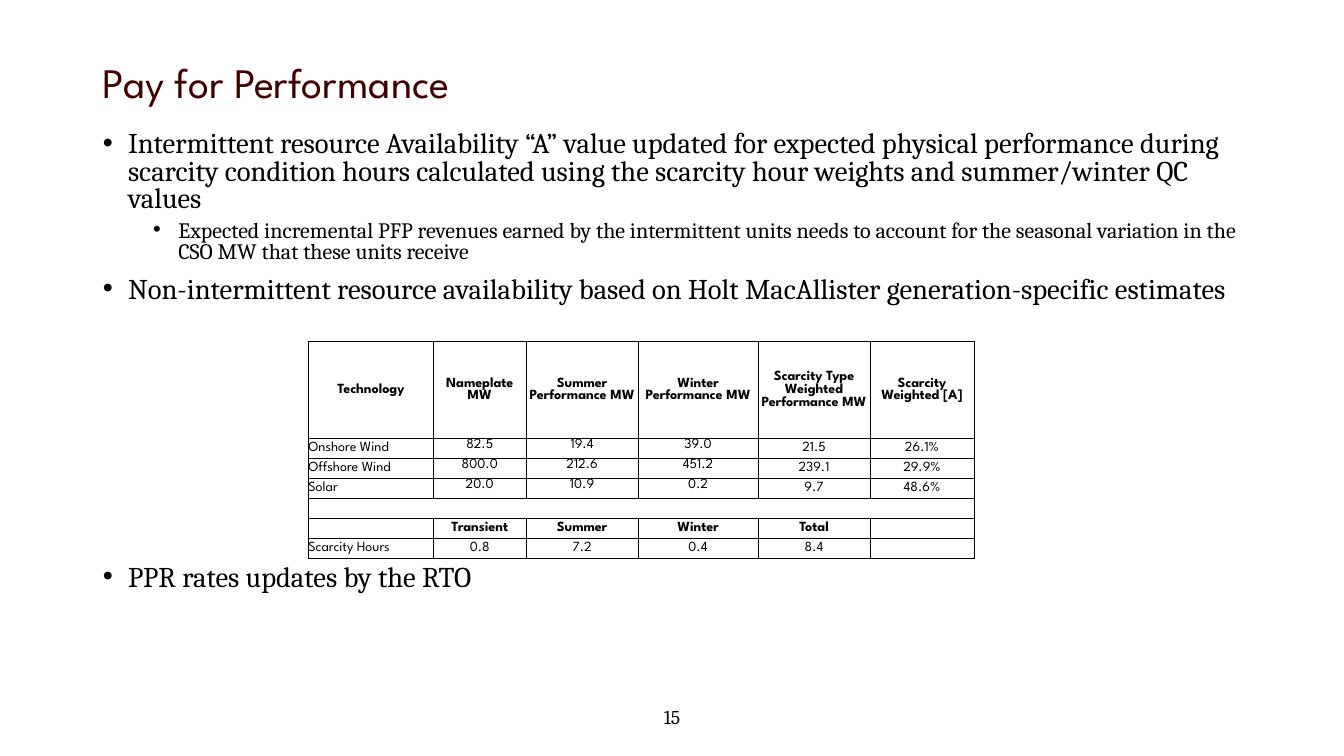
from dataclasses import dataclass
from lxml.etree import SubElement
from pptx import Presentation
from pptx.dml.color import RGBColor
from pptx.enum.text import MSO_ANCHOR, MSO_AUTO_SIZE, PP_ALIGN
from pptx.oxml.ns import qn
from pptx.util import Inches, Pt


@dataclass(frozen=True)
class Theme:
    ink: str = "000000"
    head: str = "400000"
    serif: str = "Cambria"
    sans: str = "League Spartan"
    title: float = 30
    main: float = 20.4
    sub: float = 15.7
    cell: float = 10
    page: float = 14
    rule: float = 0.5


class Deck:
    def __init__(self, theme):
        self.theme = theme
        self.show = Presentation()
        self.show.slide_width = Inches(13.33)
        self.show.slide_height = Inches(7.5)
        self.slide = self.show.slides.add_slide(self.show.slide_layouts[1])

    def wide(self, share):
        return round(self.show.slide_width * share / 100)

    def high(self, share):
        return round(self.show.slide_height * share / 100)

    def box(self, left, top, width, height):
        return self.wide(left), self.high(top), self.wide(width), self.high(height)

    def place(self, shape, area):
        shape.left, shape.top, shape.width, shape.height = self.box(*area)
        shape.text_frame.auto_size = MSO_AUTO_SIZE.NONE
        shape.text_frame.word_wrap = True

    def style(self, para, face, size, color, bold=False):
        font = para.font
        font.name, font.size, font.bold = face, Pt(size), bold
        font.color.rgb = RGBColor.from_string(color)

    def title(self, text, area):
        shape = self.slide.shapes.title
        self.place(shape, area)
        shape.text_frame.vertical_anchor = MSO_ANCHOR.MIDDLE
        para = shape.text_frame.paragraphs[0]
        para.text, para.alignment, para.line_spacing = text, PP_ALIGN.LEFT, 0.9
        self.style(para, self.theme.sans, self.theme.title, self.theme.head)

    def bullets(self, items, area):
        shape = self.slide.placeholders[1]
        self.place(shape, area)
        frame = shape.text_frame
        frame.text = "\n".join(text for text, _, _ in items)
        for para, (_, level, gap) in zip(frame.paragraphs, items):
            para.level = level
            props = para._p.get_or_add_pPr()
            props.set("marL", str(Inches(0.25 + 0.5 * level)))
            props.set("indent", str(Inches(-0.25)))
            SubElement(props, qn("a:buFont"), typeface="Arial")
            SubElement(props, qn("a:buChar"), char="•")
            para.line_spacing, para.space_before = 0.8, Pt(gap)
            size = self.theme.sub if level else self.theme.main
            self.style(para, self.theme.serif, size, self.theme.ink)

    def number(self, text, area):
        shape = self.slide.shapes.add_textbox(*self.box(*area))
        self.place(shape, area)
        para = shape.text_frame.paragraphs[0]
        para.text, para.alignment, para.line_spacing = text, PP_ALIGN.CENTER, 0.9
        self.style(para, self.theme.serif, self.theme.page, self.theme.ink)

    def border(self, cell):
        props = cell._tc.get_or_add_tcPr()
        for side in ("lnL", "lnR", "lnT", "lnB"):
            line = SubElement(props, qn(f"a:{side}"), w=str(Pt(self.theme.rule)))
            fill = SubElement(line, qn("a:solidFill"))
            SubElement(fill, qn("a:srgbClr"), val=self.theme.ink)

    def cell(self, cell, text, bold, left, top):
        self.border(cell)
        cell.fill.background()
        cell.margin_left = cell.margin_right = 0
        cell.margin_top = cell.margin_bottom = 0
        cell.vertical_anchor = MSO_ANCHOR.TOP if top else MSO_ANCHOR.MIDDLE
        para = cell.text_frame.paragraphs[0]
        para.alignment = PP_ALIGN.LEFT if left else PP_ALIGN.CENTER
        if text:
            para.text = text
        else:
            para._p.get_or_add_endParaRPr().set("sz", str(self.theme.cell * 100))
        self.style(para, self.theme.sans, self.theme.cell, self.theme.ink, bold)

    def table(self, rows, left, top, cols, tall, heads, raised, spans):
        area = self.box(left, top, sum(cols), sum(tall))
        grid = self.slide.shapes.add_table(len(rows), len(cols), *area).table
        grid.first_row = grid.horz_banding = False
        for col, share in zip(grid.columns, cols):
            col.width = self.wide(share)
        for row, share in zip(grid.rows, tall):
            row.height = self.high(share)
        for r, row in enumerate(rows):
            for c, text in enumerate(row):
                bold = r in heads
                top = r in raised and 1 <= c <= 3
                self.cell(grid.cell(r, c), text, bold, c == 0 and not bold, top)
        for r in spans:
            grid.cell(r, 0).merge(grid.cell(r, len(cols) - 1))


def main():
    deck = Deck(Theme())
    deck.title("Pay for Performance", (6.9, 4, 86.27, 14.53))
    deck.bullets([
        ("Intermittent resource Availability “A” value updated for expected physical "
         "performance during scarcity condition hours calculated using the scarcity "
         "hour weights and summer/winter QC values", 0, 0),
        ("Expected incremental PFP revenues earned by the intermittent units needs to "
         "account for the seasonal variation in the CSO MW that these units receive", 1, 5),
        ("Non-intermittent resource availability based on Holt MacAllister "
         "generation-specific estimates", 0, 10),
        ("PPR rates updates by the RTO", 0, 186),
    ], (6.9, 16.8, 86.27, 66.4))
    deck.table([
        ("Technology", "Nameplate MW", "Summer Performance MW", "Winter Performance MW",
         "Scarcity Type Weighted Performance MW", "Scarcity Weighted [A]"),
        ("Onshore Wind", "82.5", "19.4", "39.0", "21.5", "26.1%"),
        ("Offshore Wind", "800.0", "212.6", "451.2", "239.1", "29.9%"),
        ("Solar", "20.0", "10.9", "0.2", "9.7", "48.6%"),
        ("",) * 6,
        ("", "Transient", "Summer", "Winter", "Total", ""),
        ("Scarcity Hours", "0.8", "7.2", "0.4", "8.4", ""),
    ], 22.95, 45.2, (9.3, 6.9, 8.33, 8.93, 8.33, 7.73), (12.8,) + (2.65,) * 6,
        heads={0, 5}, raised={1, 2, 3}, spans=(4,))
    deck.number("15", (40.06, 92.93, 19.88, 5.73))
    deck.show.save("out.pptx")


if __name__ == "__main__":
    main()
